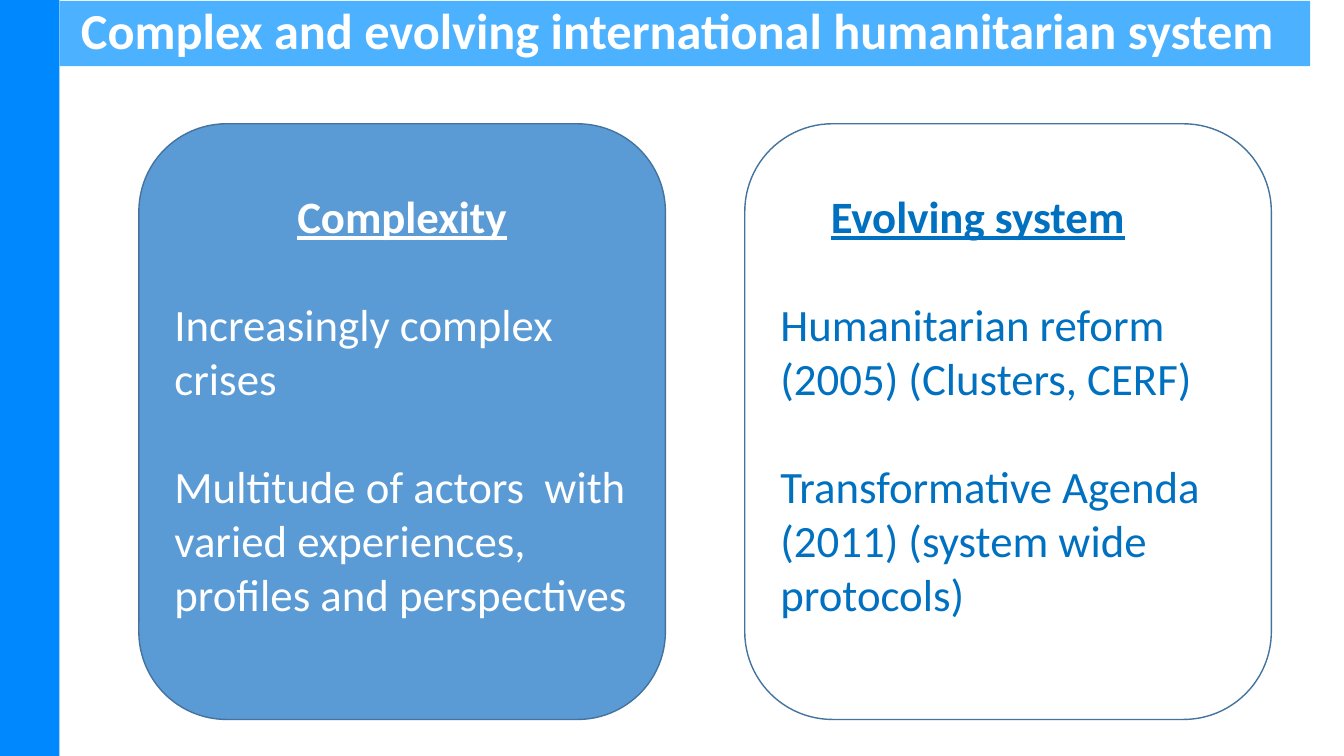
from lxml import etree
from pptx import Presentation
from pptx import util as u
from pptx.dml import color
from pptx.enum import shapes, text
from pptx.oxml import ns

FONT = "Calibri"
TOP, HEIGHT = 3.12, 15.01
CARD_WIDTH = 13.27
CARDS = [
    (3.5, "Complexity",
     ["Increasingly complex crises",
      "Multitude of actors  with varied experiences, profiles and perspectives"],
     "FFFFFF", "5B9BD5", True),
    (18.77, "Evolving system",
     ["Humanitarian reform (2005) (Clusters, CERF)",
      "Transformative Agenda (2011) (system wide protocols)"],
     "0070C0", None, False),
]


def rgb(value):
    """Turn a hex string into a colour."""
    return color.RGBColor.from_string(value)


def set_fill(sp, value, alpha=None):
    """Fill a shape, optionally with an opacity in percent."""
    if value is None:
        sp.fill.background()
        return
    sp.fill.solid()
    sp.fill.fore_color.rgb = rgb(value)
    if alpha is not None:
        clr = sp._element.spPr.find(".//" + ns.qn("a:srgbClr"))
        etree.SubElement(clr, ns.qn("a:alpha")).set("val", str(alpha * 1000))


def add_box(s, kind, left, top, width, height, fill, line=None):
    """Add a preset shape without shadow."""
    sp = s.shapes.add_shape(kind, u.Cm(left), u.Cm(top), u.Cm(width), u.Cm(height))
    sp.shadow.inherit = False
    set_fill(sp, fill)
    if line:
        sp.line.color.rgb = rgb(line)
        sp.line.width = u.Pt(1)
    else:
        sp.line.fill.background()
    return sp


def add_run(p, words, size, value, bold=False, underline=False):
    """Add one formatted run to a paragraph."""
    r = p.add_run()
    r.text = words
    r.font.name = FONT
    r.font.size = u.Pt(size)
    r.font.color.rgb = rgb(value)
    r.font.bold = bold
    r.font.underline = underline


def set_title(s, words):
    """Place the title placeholder as a translucent bar."""
    sp = s.shapes.title
    sp.left, sp.top, sp.width, sp.height = u.Cm(1.5), u.Cm(0.02), u.Cm(31.52), u.Cm(1.65)
    set_fill(sp, "0091FF", 70)
    tf = sp.text_frame
    tf.word_wrap = True
    tf.auto_size = text.MSO_AUTO_SIZE.NONE
    tf.vertical_anchor = text.MSO_ANCHOR.MIDDLE
    tf.margin_left, tf.margin_right = u.Cm(0.54), u.Cm(0.25)
    tf.margin_top = tf.margin_bottom = u.Cm(0.13)
    p = tf.paragraphs[0]
    p.alignment = text.PP_ALIGN.LEFT
    p.line_spacing = 0.9
    add_run(p, words, 36, "FFFFFF", bold=True)


def add_card(s, left, heading, points, ink, fill, centred):
    """Add a rounded card with an underlined heading and its points."""
    sp = add_box(s, shapes.MSO_SHAPE.ROUNDED_RECTANGLE,
                 left, TOP, CARD_WIDTH, HEIGHT, fill, "43739E")
    tf = sp.text_frame
    tf.word_wrap = True
    tf.vertical_anchor = text.MSO_ANCHOR.MIDDLE
    tf.margin_bottom = u.Cm(0.99)
    p = tf.paragraphs[0]
    if centred:
        p.alignment = text.PP_ALIGN.CENTER
    else:
        p.alignment = text.PP_ALIGN.LEFT
        p.level = 1
    add_run(p, heading, 32, ink, bold=True, underline=True)
    for point in points:
        p = tf.add_paragraph()
        p.alignment = text.PP_ALIGN.LEFT
        p.space_before = u.Pt(39)
        add_run(p, point, 32, ink)


def main():
    """Build and save the slide."""
    prs = Presentation()
    prs.slide_width, prs.slide_height = u.Cm(33.87), u.Cm(19.05)
    s = prs.slides.add_slide(prs.slide_layouts[5])
    add_box(s, shapes.MSO_SHAPE.RECTANGLE, 0, 0, 1.5, 19.05, "0088FF")
    set_title(s, "Complex and evolving international humanitarian system")
    for card in CARDS:
        add_card(s, *card)
    prs.save("out.pptx")


if __name__ == "__main__":
    main()
